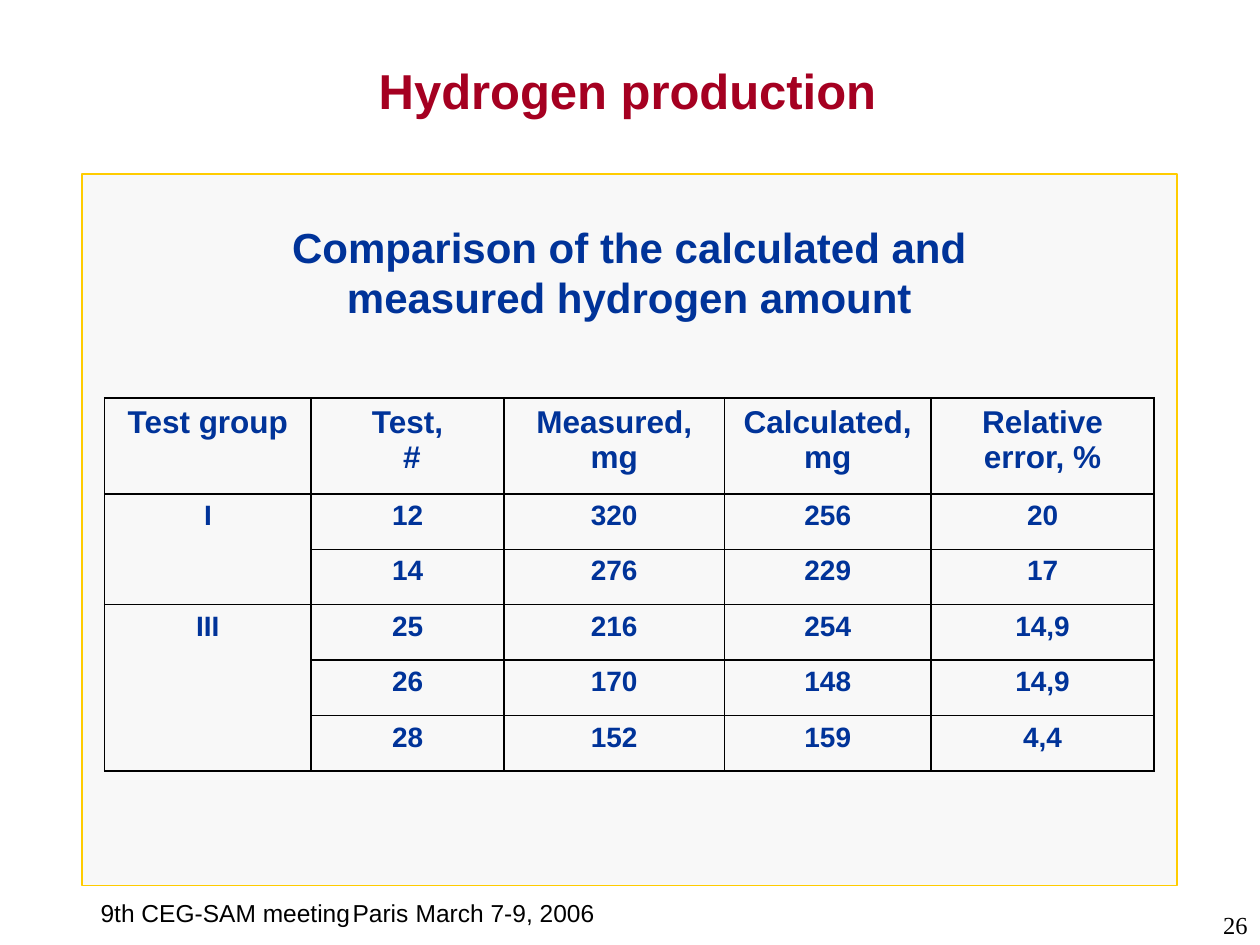
"""Build the hydrogen production slide with its comparison table."""
from lxml import etree
from pptx import Presentation
from pptx import util as u
from pptx.dml.color import RGBColor
from pptx.enum import shapes, text
from pptx.oxml import ns

CRIMSON = RGBColor(0xA5, 0x00, 0x21)
NAVY = RGBColor(0x00, 0x33, 0x99)
BLACK = RGBColor(0x00, 0x00, 0x00)
GOLD = RGBColor(0xFF, 0xCC, 0x00)
PALE = RGBColor(0xF8, 0xF8, 0xF8)

deck = Presentation()
deck.slide_width, deck.slide_height = u.Inches(10), u.Inches(7.5)
COLUMN, ROW = deck.slide_width / 100, deck.slide_height / 100
slide = deck.slides.add_slide(deck.slide_layouts[5])


def area(left, top, width, height):
    """Turn percentages of the slide into left, top, width and height."""
    return [int(share * unit) for share, unit in zip((left, top, width, height), (COLUMN, ROW) * 2)]


def write(frame, words, size, color, bold=True, align=text.PP_ALIGN.CENTER, face="Arial"):
    """Fill a text frame and format its runs."""
    frame.text = words
    frame.vertical_anchor = text.MSO_ANCHOR.TOP
    for paragraph in frame.paragraphs:
        paragraph.alignment = align
        for run in paragraph.runs:
            run.font.size, run.font.name, run.font.bold = u.Pt(size), face, bold
            run.font.color.rgb = color


panel = slide.shapes.add_shape(shapes.MSO_SHAPE.RECTANGLE, *area(6.5, 18.4, 86.9, 75.33))
panel.shadow.inherit = False
panel.fill.solid()
panel.fill.fore_color.rgb = PALE
panel.line.color.rgb = GOLD
panel.line.width = u.Pt(1)

meeting = slide.shapes.add_textbox(*area(7, 94.4, 52.1, 4.93)).text_frame
meeting.word_wrap = True
meeting_properties = meeting.paragraphs[0]._p.get_or_add_pPr()
stops = etree.SubElement(meeting_properties, ns.qn("a:tabLst"))
for share in (22, 29.1):
    etree.SubElement(stops, ns.qn("a:tab"), pos=str(int(share * COLUMN)), algn="l")
write(meeting, "9th CEG-SAM meeting\tParis\tMarch 7-9, 2006", 14, BLACK, False, text.PP_ALIGN.LEFT)

page_number = slide.shapes.add_textbox(*area(79.2, 95.73, 20.8, 4.27)).text_frame
page_number.word_wrap = False
write(page_number, "26", 14, BLACK, False, text.PP_ALIGN.RIGHT, "Times New Roman")
page_number.vertical_anchor = text.MSO_ANCHOR.MIDDLE

heading = slide.shapes.title
heading.left, heading.top, heading.width, heading.height = area(4.8, 5.2, 90, 12.53)
write(heading.text_frame, "Hydrogen production", 28, CRIMSON)
heading.text_frame.margin_top = u.Inches(0.09)

subtitle = slide.shapes.add_textbox(*area(16.1, 22.53, 67.7, 12)).text_frame
subtitle.word_wrap = True
subtitle.margin_top = u.Inches(0.07)
write(subtitle, "Comparison of the calculated and measured hydrogen amount", 24, NAVY)
subtitle.paragraphs[0].line_spacing = u.Pt(28.6)

RESULTS = [
    ("Test group", "Test,\n #", "Measured, mg", "Calculated, mg", "Relative error, %"),
    ("I", "12", "320", "256", "20"),
    ("", "14", "276", "229", "17"),
    ("III", "25", "216", "254", "14,9"),
    ("", "26", "170", "148", "14,9"),
    ("", "28", "152", "159", "4,4"),
]
COLUMN_SHARES = (16.4, 15.3, 17.5, 16.4, 17.7)
ROW_SHARES = (10.13,) + (5.87,) * 5

comparison = slide.shapes.add_table(
    len(RESULTS), len(COLUMN_SHARES), *area(8.3, 42.13, sum(COLUMN_SHARES), sum(ROW_SHARES))).table
comparison.horz_banding = False
for column, share in zip(comparison.columns, COLUMN_SHARES):
    column.width = int(share * COLUMN)
for row, share in zip(comparison.rows, ROW_SHARES):
    row.height = int(share * ROW)

for r, values in enumerate(RESULTS):
    for c, value in enumerate(values):
        cell = comparison.cell(r, c)
        write(cell.text_frame, value, 16 if r else 18, NAVY)
        properties = cell._tc.get_or_add_tcPr()
        for side in ("lnL", "lnR", "lnT", "lnB"):
            border = etree.SubElement(properties, ns.qn(f"a:{side}"), w=str(u.Pt(1)))
            ink = etree.SubElement(border, ns.qn("a:solidFill"))
            etree.SubElement(ink, ns.qn("a:srgbClr"), val=str(BLACK))
        cell.fill.background()

for first, last in ((1, 2), (3, 5)):
    comparison.cell(first, 0).merge(comparison.cell(last, 0))

deck.save("out.pptx")
